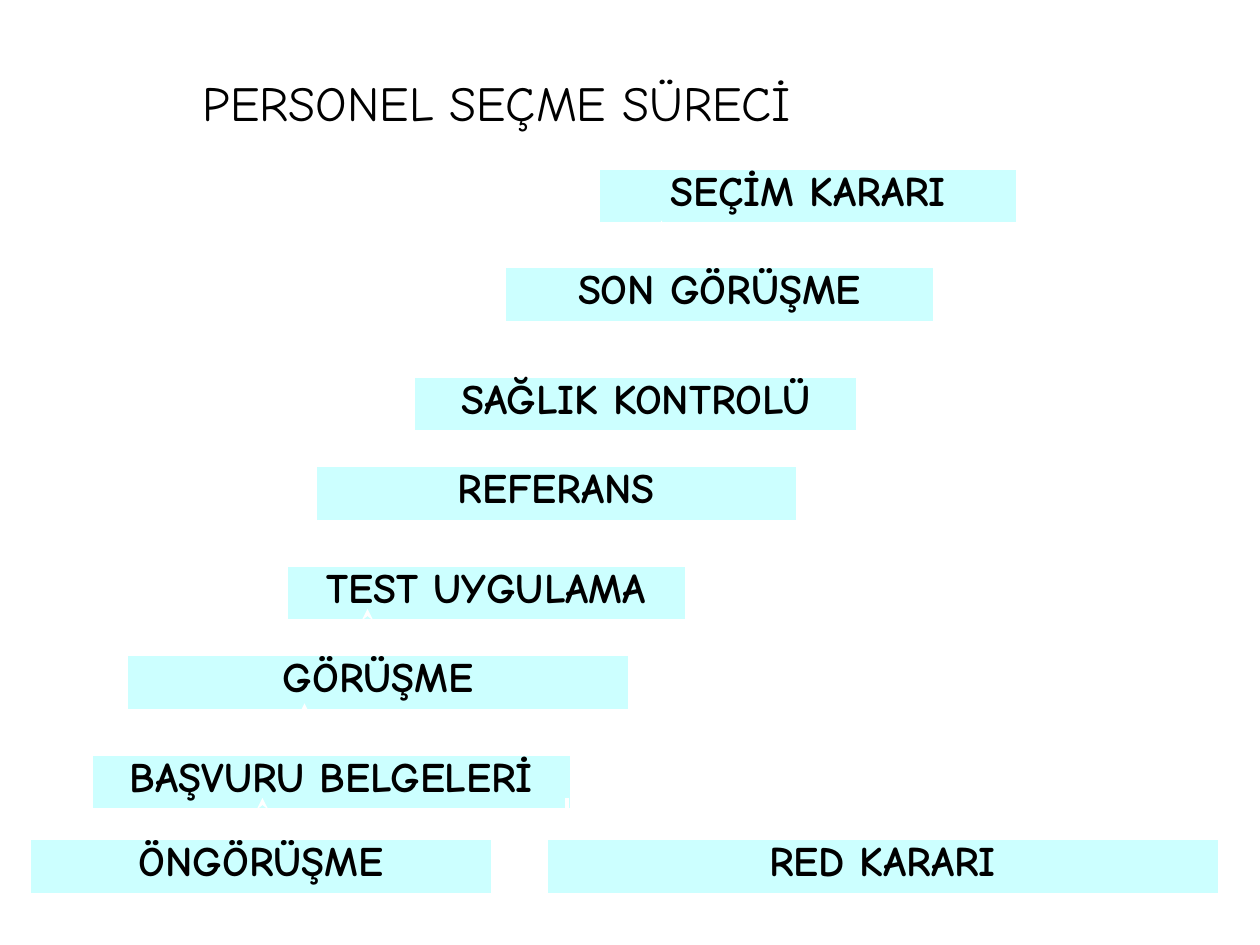
from lxml.etree import SubElement
from pptx import Presentation
from pptx.dml.color import RGBColor
from pptx.enum.shapes import MSO_CONNECTOR, MSO_SHAPE
from pptx.enum.text import MSO_ANCHOR, PP_ALIGN
from pptx.oxml.ns import qn
from pptx.util import Pt

COLORS = {"box": "CCFFFF", "line": "FFFFFF", "text": "000000"}
FONT = "Comic Neue"
BOX_HEIGHT = 32.4
LINE_WIDTH = 2.25


def write_text(shape, text, size, bold, anchor):
    frame = shape.text_frame
    frame.word_wrap = True
    frame.vertical_anchor = anchor
    para = frame.paragraphs[0]
    para.text = text
    para.alignment = PP_ALIGN.CENTER
    para.line_spacing = 0.8
    para.font.name = FONT
    para.font.size = Pt(size)
    para.font.bold = bold
    para.font.color.rgb = RGBColor.from_string(COLORS["text"])


def style_line(line):
    line.color.rgb = RGBColor.from_string(COLORS["line"])
    line.width = Pt(LINE_WIDTH)


deck = Presentation()
deck.slide_width, deck.slide_height = Pt(720), Pt(540)
page = deck.slides.add_slide(deck.slide_layouts[6])

title = page.shapes.add_textbox(Pt(-31), Pt(37.4), Pt(630), Pt(48.2))
write_text(title, "PERSONEL SEÇME SÜRECİ", 28, False, MSO_ANCHOR.MIDDLE)

# Text, left, top, width; the stages climb from the bottom
stages = [
    ("ÖNGÖRÜŞME", 16.6, 478.8, 265),
    ("BAŞVURU BELGELERİ", 51.8, 430.6, 275),
    ("GÖRÜŞME", 72, 373.7, 288),
    ("TEST UYGULAMA", 163.4, 322.6, 229),
    ("REFERANS", 180, 265.7, 275.8),
    ("SAĞLIK KONTROLÜ", 236.2, 214.6, 254.2),
    ("SON GÖRÜŞME", 288, 151.9, 246.2),
    ("SEÇİM KARARI", 342, 95.8, 239.8),
    ("RED KARARI", 311.8, 478.8, 385.2),
]
for text, left, top, width in stages:
    box = page.shapes.add_shape(
        MSO_SHAPE.RECTANGLE, Pt(left), Pt(top), Pt(width), Pt(BOX_HEIGHT))
    box.shadow.inherit = False
    box.fill.solid()
    box.fill.fore_color.rgb = RGBColor.from_string(COLORS["box"])
    style_line(box.line)
    write_text(box, text, 24, True, MSO_ANCHOR.TOP)

# Each stage leads up to the next one, or down to the rejection
steps_up = [(150, 468), (174, 414), (210, 360), (270, 312),
            (306, 258), (330, 198), (378, 138)]
rejections = [(564, 132, 474), (516, 186, 480), (474, 246, 480),
              (432, 300, 480), (384, 360, 474), (348, 414, 474),
              (324, 456, 480)]
arrows = [(282, 492, 306, 492)]
arrows += [(x, start, x, start - 12) for x, start in steps_up]
arrows += [(x, start, x, end) for x, start, end in rejections]
for ends in arrows:
    arrow = page.shapes.add_connector(
        MSO_CONNECTOR.STRAIGHT, *[Pt(value) for value in ends])
    style_line(arrow.line)
    SubElement(arrow.line._get_or_add_ln(), qn("a:tailEnd"), type="stealth")
    SubElement(arrow._element.spPr, qn("a:effectLst"))

deck.save("out.pptx")
